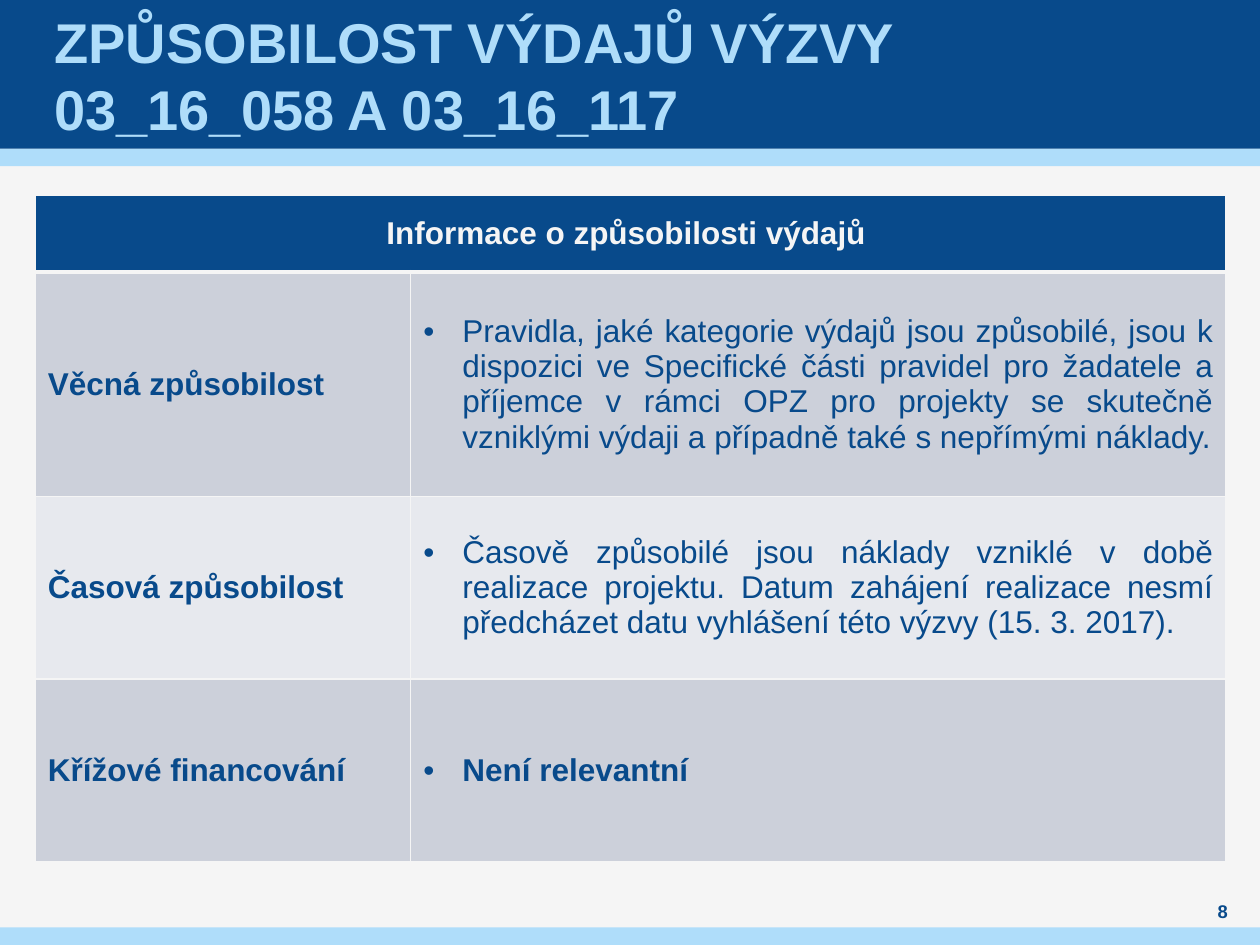
from lxml import etree
from pptx import Presentation
from pptx.dml.color import RGBColor
from pptx.enum.shapes import MSO_SHAPE
from pptx.enum.text import MSO_ANCHOR, MSO_AUTO_SIZE, PP_ALIGN
from pptx.oxml.ns import qn
from pptx.util import Inches, Pt

LEFT, CENTER, JUSTIFY = PP_ALIGN.LEFT, PP_ALIGN.CENTER, PP_ALIGN.JUSTIFY
MIDDLE = MSO_ANCHOR.MIDDLE
RECTANGLE = MSO_SHAPE.RECTANGLE
TITLE_ONLY = 5

NAVY = RGBColor(0x08, 0x4A, 0x8B)
SKY = RGBColor(0xAF, 0xDD, 0xFA)
PAPER = RGBColor(0xF5, 0xF5, 0xF5)
ROW_TINTS = (RGBColor(0xCC, 0xD0, 0xDA), RGBColor(0xE7, 0xE9, 0xEE))

WIDTH, HEIGHT = Inches(10), Inches(7.5)
HEADER_HEIGHT, STRIPE_HEIGHT = Inches(1.18), Inches(0.14)
COLUMNS = (2.98, 6.47)
ROWS = (0.61, 1.78, 1.45, 1.45)
BULLET_INDENT = Inches(0.31)

HEADING = "Informace o způsobilosti výdajů "
# (topic, explanation, alignment, bold explanation)
ELIGIBILITY = (
    ("Věcná způsobilost",
     "Pravidla, jaké kategorie výdajů jsou způsobilé, jsou k dispozici ve "
     "Specifické části pravidel pro žadatele a příjemce v rámci OPZ pro "
     "projekty se skutečně vzniklými výdaji a případně také s nepřímými "
     "náklady.", JUSTIFY, False),
    ("Časová způsobilost",
     "Časově způsobilé jsou náklady vzniklé v době realizace projektu. Datum "
     "zahájení realizace nesmí předcházet datu vyhlášení této výzvy "
     "(15. 3. 2017).", JUSTIFY, False),
    ("Křížové financování", "Není relevantní", LEFT, True),
)


def write(frame, text, size, color, align=LEFT, bold=True):
    frame.word_wrap = True
    frame.vertical_anchor = MIDDLE
    paragraph = frame.paragraphs[0]
    paragraph.text = text
    paragraph.alignment = align
    style = {"name": "Arial", "size": Pt(size), "bold": bold}
    for run in paragraph.runs:
        for attribute, value in style.items():
            setattr(run.font, attribute, value)
        run.font.color.rgb = color


def set_margins(frame, side):
    frame.margin_left = frame.margin_right = side
    frame.margin_top = frame.margin_bottom = 0


def add_band(slide, top, height, color):
    band = slide.shapes.add_shape(RECTANGLE, 0, top, WIDTH, height)
    band.shadow.inherit = False
    band.fill.solid()
    band.fill.fore_color.rgb = color
    band.line.fill.background()


def add_header(slide, text):
    add_band(slide, HEADER_HEIGHT, STRIPE_HEIGHT, SKY)
    add_band(slide, 0, HEADER_HEIGHT, NAVY)
    title = slide.shapes.title
    slide.shapes.element.append(title.element)  # in front of the bands
    title.left, title.top = Inches(0.39), 0
    title.width, title.height = Inches(9.21), HEADER_HEIGHT
    frame = title.text_frame
    frame.auto_size = MSO_AUTO_SIZE.NONE
    set_margins(frame, Inches(0.04))
    write(frame, text, 32, SKY)


def add_footer(slide, number):
    add_band(slide, HEIGHT - STRIPE_HEIGHT, STRIPE_HEIGHT, SKY)
    box = slide.shapes.add_textbox(
        Inches(9.45), Inches(7.13), Inches(0.51), Inches(0.2))
    set_margins(box.text_frame, 0)
    write(box.text_frame, number, 10.5, NAVY, CENTER)


def style_cell(cell, fill, top=1, bottom=1):
    """Give the cell its borders, in points, and then its fill."""
    properties = cell._tc.get_or_add_tcPr()
    for side, width in {"L": 1, "R": 1, "T": top, "B": bottom}.items():
        line = etree.SubElement(properties, qn(f"a:ln{side}"), w=str(Pt(width)))
        solid = etree.SubElement(line, qn("a:solidFill"))
        etree.SubElement(solid, qn("a:srgbClr"), val=str(PAPER))
    cell.fill.solid()
    cell.fill.fore_color.rgb = fill


def add_bullet(paragraph):
    properties = paragraph._p.get_or_add_pPr()
    properties.set("marL", str(BULLET_INDENT))
    properties.set("indent", str(-BULLET_INDENT))
    etree.SubElement(properties, qn("a:buFont"), typeface="Arial")
    etree.SubElement(properties, qn("a:buChar"), char="•")


def add_eligibility_table(slide, left, top):
    table = slide.shapes.add_table(
        len(ROWS), len(COLUMNS), left, top,
        Inches(sum(COLUMNS)), Inches(sum(ROWS))).table
    for column, width in zip(table.columns, COLUMNS):
        column.width = Inches(width)
    for row, height in zip(table.rows, ROWS):
        row.height = Inches(height)

    heading = table.cell(0, 0)
    heading.merge(table.cell(0, 1))
    for cell in table.rows[0].cells:
        style_cell(cell, NAVY, bottom=3)
    write(heading.text_frame, HEADING, 18, PAPER, CENTER)
    heading.vertical_anchor = MIDDLE

    for index, (topic, explanation, align, bold) in enumerate(ELIGIBILITY):
        topic_cell, explanation_cell = table.rows[index + 1].cells
        for cell in (topic_cell, explanation_cell):
            style_cell(cell, ROW_TINTS[index % 2], top=1 if index else 3)
            cell.vertical_anchor = MIDDLE
        write(topic_cell.text_frame, topic, 18, NAVY)
        write(explanation_cell.text_frame, explanation, 18, NAVY, align, bold)
        add_bullet(explanation_cell.text_frame.paragraphs[0])


def main():
    deck = Presentation()
    deck.slide_width, deck.slide_height = WIDTH, HEIGHT
    slide = deck.slides.add_slide(deck.slide_layouts[TITLE_ONLY])
    slide.background.fill.solid()
    slide.background.fill.fore_color.rgb = PAPER
    add_header(slide, "ZPŮSOBILOST VÝDAJŮ VÝZVY \v03_16_058 A 03_16_117")
    add_eligibility_table(slide, Inches(0.28), Inches(1.55))
    add_footer(slide, "8")
    deck.save("out.pptx")


if __name__ == "__main__":
    main()
